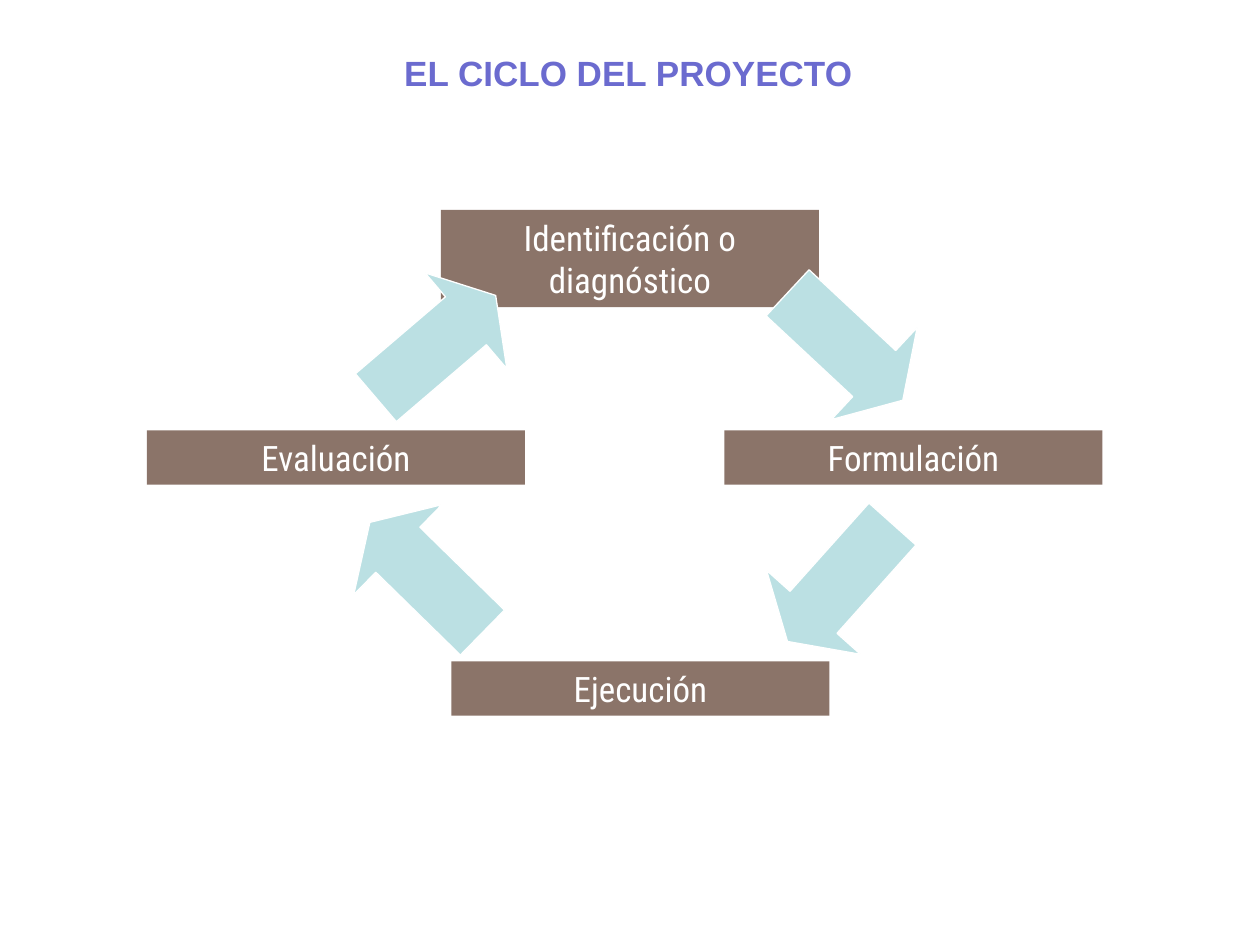
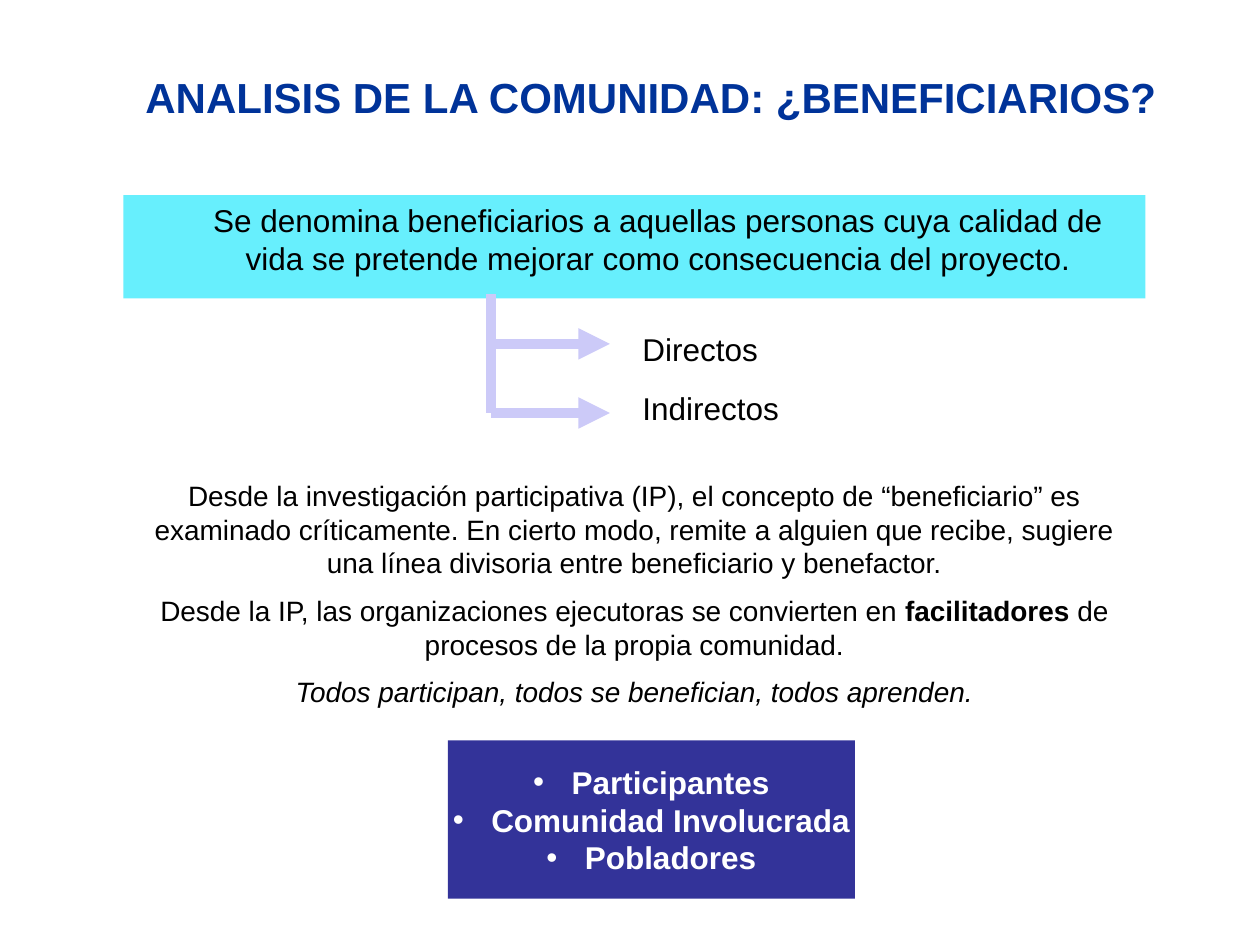
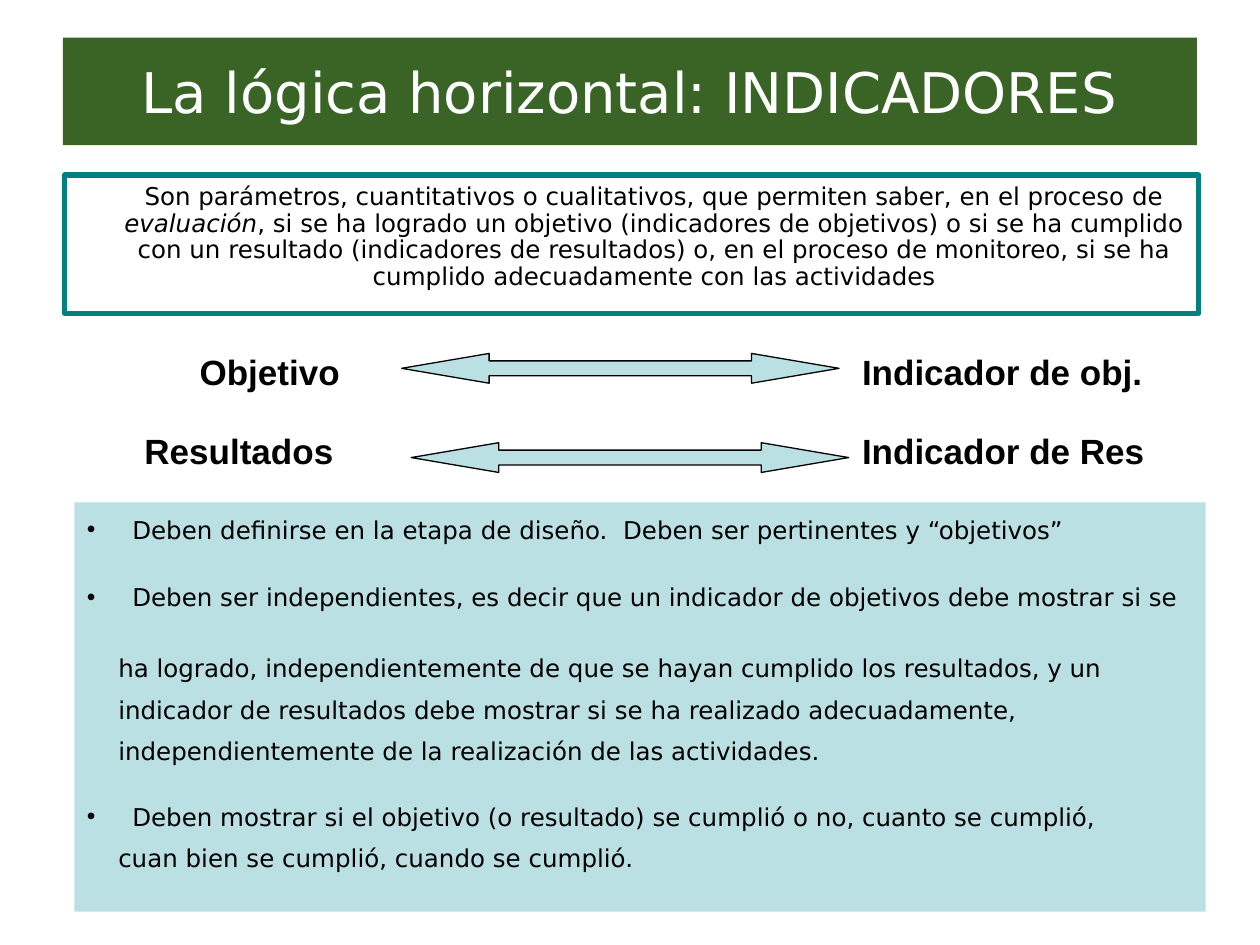
"""Builds three slides on the project cycle, its community and its indicators."""
import lxml.etree
import pptx
import pptx.dml.color
import pptx.enum.shapes
import pptx.enum.text
import pptx.oxml.ns
import pptx.util

Pt = pptx.util.Pt
RGB = pptx.dml.color.RGBColor
SHAPE = pptx.enum.shapes.MSO_SHAPE
ALIGN = pptx.enum.text.PP_ALIGN
ANCHOR = pptx.enum.text.MSO_ANCHOR
qn = pptx.oxml.ns.qn

WHITE = RGB(0xFF, 0xFF, 0xFF)
BLACK = RGB(0x00, 0x00, 0x00)
BROWN = RGB(0x8B, 0x74, 0x69)
PALE = RGB(0xBB, 0xE0, 0xE3)
VIOLET = RGB(0x6B, 0x6B, 0xCF)
BLUE = RGB(0x00, 0x33, 0x99)
CYAN = RGB(0x67, 0xEF, 0xFD)
LILAC = RGB(0xCC, 0xCA, 0xF8)
NAVY = RGB(0x33, 0x33, 0x99)
GREEN = RGB(0x39, 0x64, 0x26)
TEAL = RGB(0x00, 0x80, 0x80)

ARIAL = "Arial"
DEJAVU = "DejaVu Sans"
ROBOTO = "Roboto Condensed"


def write(frame, text, size=18, color=BLACK, font=ARIAL, align=ALIGN.LEFT, bold=False,
          slant=False, mark="bold", before=0, space=None, left=0, first=0, bullet=None):
    para = frame.add_paragraph() if frame.text else frame.paragraphs[0]
    props = para._p.get_or_add_pPr()
    props.set("marL", str(Pt(left)))
    props.set("indent", str(Pt(first)))
    if bullet:
        lxml.etree.SubElement(props, qn("a:buFont"), typeface=ARIAL)
        lxml.etree.SubElement(props, qn("a:buChar"), char=bullet)
    para.alignment = align
    para.space_before = Pt(before)
    if space:
        para.line_spacing = space
    for index, part in enumerate(text.split("*")):
        run = para.add_run()
        run.text = part
        run.font.size = Pt(size)
        run.font.name = font
        run.font.color.rgb = color
        marked = index % 2 == 1
        run.font.bold = bold or (marked and mark == "bold")
        run.font.italic = slant or (marked and mark == "slant")


class Deck:
    """Holds the shared style and the slide being built."""

    def __init__(self):
        self.file = pptx.Presentation()
        self.file.slide_width, self.file.slide_height = Pt(720), Pt(540)
        self.slide = None

    def start(self):
        self.slide = self.file.slides.add_slide(self.file.slide_layouts[6])

    def frame(self, shape, anchor, top=3.6, side=7.2):
        frame = shape.text_frame
        frame.word_wrap = True
        frame.vertical_anchor = anchor
        frame.margin_left = frame.margin_right = Pt(side)
        frame.margin_top, frame.margin_bottom = Pt(top), Pt(3.6)
        return frame

    def label(self, place, anchor=ANCHOR.TOP):
        return self.frame(self.slide.shapes.add_textbox(*map(Pt, place)), anchor)

    def shape(self, kind, place, fill=None, line=None, width=0.75, turn=0, adjust=()):
        shape = self.slide.shapes.add_shape(kind, *map(Pt, place))
        shape.shadow.inherit = False
        shape.rotation = turn
        for index, value in enumerate(adjust):
            shape.adjustments[index] = value
        if fill is None:
            shape.fill.background()
        else:
            shape.fill.solid()
            shape.fill.fore_color.rgb = fill
        if line is None:
            shape.line.fill.background()
        else:
            shape.line.color.rgb = line
            shape.line.width = Pt(width)
        return shape

    def box(self, place, fill=None, line=None, width=0.75, anchor=ANCHOR.TOP, **pad):
        return self.frame(self.shape(SHAPE.RECTANGLE, place, fill, line, width), anchor, **pad)

    def line(self, x1, y1, x2, y2, color, width, arrow=False):
        line = self.slide.shapes.add_connector(
            pptx.enum.shapes.MSO_CONNECTOR.STRAIGHT, *map(Pt, (x1, y1, x2, y2)))
        line.line.color.rgb = color
        line.line.width = Pt(width)
        props = line.element.spPr
        if arrow:
            lxml.etree.SubElement(props.find(qn("a:ln")), qn("a:tailEnd"), type="triangle")
        lxml.etree.SubElement(props, qn("a:effectLst"))


def cycle(deck):
    deck.start()
    stages = (("Identificación o diagnóstico", 252, 120, 55.5), ("Formulación", 414, 246, 31),
              ("Ejecución", 258, 378, 31), ("Evaluación", 84, 246, 31))
    for text, x, y, height in stages:
        frame = deck.box((x, y, 216, height), BROWN)
        write(frame, text, size=20, color=WHITE, font=ROBOTO, align=ALIGN.CENTER)
    for x, y, turn in ((447, 153, 313), (444, 288, 41.8), (207.5, 285, 134.4), (213, 153, 229.5)):
        deck.shape(SHAPE.DOWN_ARROW, (x, y, 72, 90), PALE, WHITE, turn=turn, adjust=(0.5, 0.31))
    write(deck.label((65, 26, 588, 31)), "EL CICLO DEL PROYECTO",
          size=20, color=VIOLET, align=ALIGN.CENTER, bold=True)


def people(deck):
    deck.start()
    write(deck.label((48, 10, 648, 90), ANCHOR.MIDDLE), "ANALISIS DE LA COMUNIDAD: ¿BENEFICIARIOS?",
          size=24, color=BLUE, align=ALIGN.CENTER, bold=True)
    write(deck.box((70.5, 111.5, 584, 59), CYAN),
          "Se denomina beneficiarios a aquellas personas cuya calidad de vida "
          "se pretende mejorar como consecuencia del proyecto.", align=ALIGN.CENTER, left=27)

    stem, foot = 280.5, 236
    deck.line(stem, 168, stem, foot, LILAC, 6)
    for text, tip, top in (("Indirectos", foot, 219), ("Directos", 196.5, 185)):
        deck.line(stem, tip, 348.5, tip, LILAC, 6, arrow=True)
        write(deck.label((360, top, 119, 29)), text)

    body = deck.label((70.5, 270, 584, 142))
    style = dict(size=16, align=ALIGN.CENTER)
    write(body, "Desde la investigación participativa (IP), el concepto de “beneficiario” es examinado "
          "críticamente. En cierto modo, remite a alguien que recibe, sugiere una línea divisoria "
          "entre beneficiario y benefactor.", **style)
    write(body, "Desde la IP, las organizaciones ejecutoras se convierten en *facilitadores* "
          "de procesos de la propia comunidad.", before=8, **style)
    write(body, "Todos participan, todos se benefician, todos aprenden.", before=8, slant=True, **style)

    group = deck.box((256, 423, 232.5, 90.5), NAVY, anchor=ANCHOR.MIDDLE, side=0)
    for text in ("Participantes", "Comunidad Involucrada", "Pobladores"):
        write(group, text, color=WHITE, align=ALIGN.CENTER, bold=True, bullet="•", left=22, first=-22)


def measures(deck):
    deck.start()
    write(deck.box((36, 21.5, 648, 61.5), GREEN, anchor=ANCHOR.MIDDLE),
          "La lógica horizontal: INDICADORES", size=32, color=WHITE, font=DEJAVU, align=ALIGN.CENTER)
    write(deck.box((37, 100, 648, 79), line=TEAL, width=3, top=5.5),
          "Son parámetros, cuantitativos o cualitativos, que permiten saber, en el proceso de "
          "*evaluación*, si se ha logrado un objetivo (indicadores de objetivos) o si se ha cumplido "
          "con un resultado (indicadores de resultados) o, en el proceso de monitoreo, si se ha "
          "cumplido adecuadamente con las actividades",
          size=14, font=DEJAVU, align=ALIGN.CENTER, mark="slant", space=0.9, left=26)

    pairs = (("Objetivo", "Indicador de obj.", 107, 196.5, 229.5, 202),
             ("Resultados", "Indicador de Res", 75.5, 242, 235, 253))
    for goal, sign, start, top, x, y in pairs:
        for text, left, width in ((goal, start, 130), (sign, 485.5, 203)):
            write(deck.label((left, top, width, 31)), text, size=20, bold=True)
        deck.shape(SHAPE.LEFT_RIGHT_ARROW, (x, y, 250, 17), PALE, BLACK, adjust=(0.5, 2.94))

    rules = deck.box((42.5, 287, 646.5, 234), PALE, top=7)
    lines = (
        ("Deben definirse en la etapa de diseño.  Deben ser pertinentes y “objetivos”", 0, True),
        ("Deben ser independientes, es decir que un indicador de objetivos debe mostrar si se", 22, True),
        ("ha logrado, independientemente de que se hayan cumplido los resultados, y un", 23.5, False),
        ("indicador de resultados debe mostrar si se ha realizado adecuadamente,", 7, False),
        ("independientemente de la realización de las actividades.", 7, False),
        ("Deben mostrar si el objetivo (o resultado) se cumplió o no, cuanto se cumplió,", 20.5, True),
        ("cuan bien se cumplió, cuando se cumplió.", 7, False))
    for text, before, head in lines:
        place = dict(bullet="•", left=26, first=-26) if head else dict(left=18)
        write(rules, text, size=14, font=DEJAVU, before=before, **place)


def main():
    deck = Deck()
    for build in (cycle, people, measures):
        build(deck)
    deck.file.save("out.pptx")


if __name__ == "__main__":
    main()
